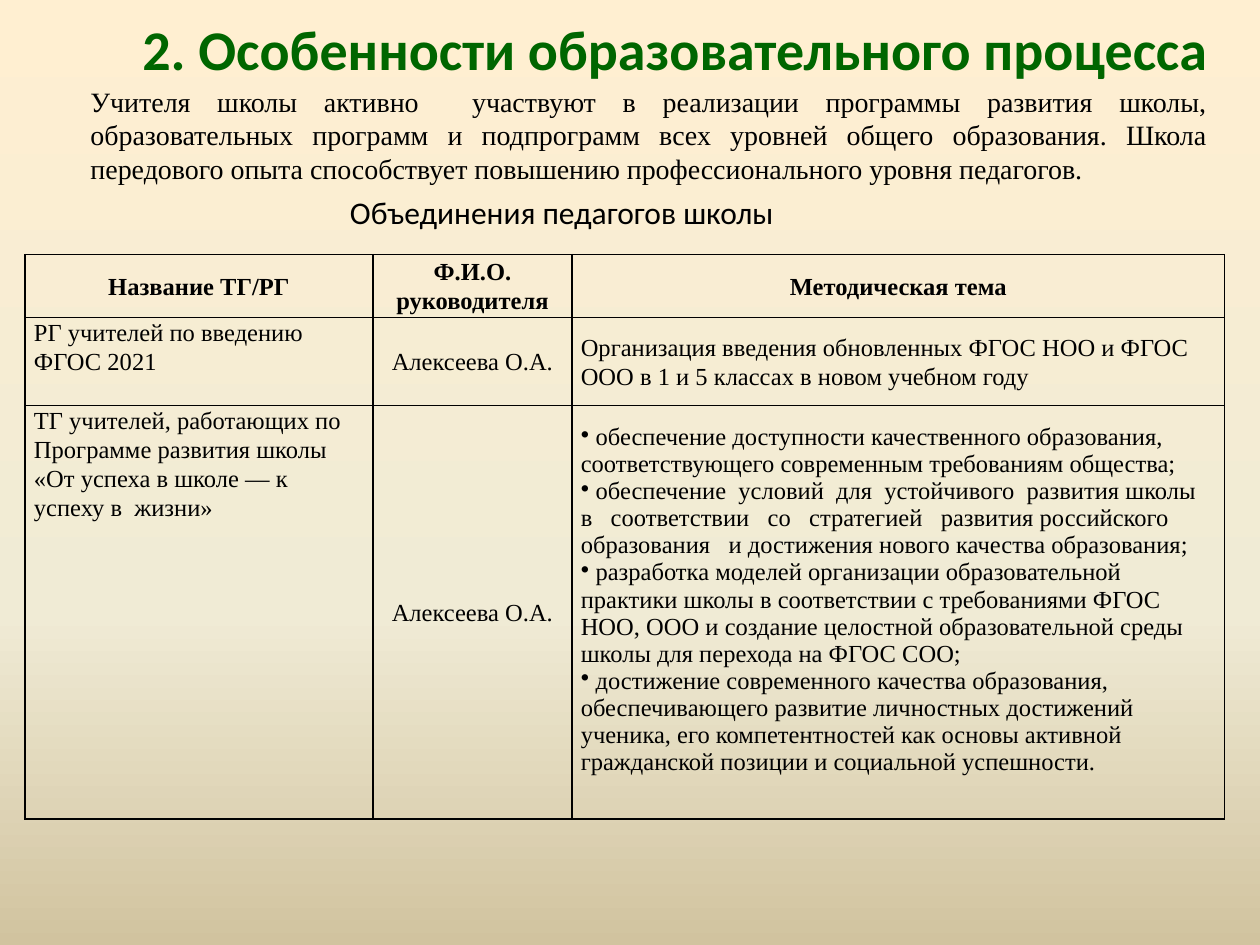
from pptx import Presentation
from pptx.dml.color import RGBColor
from pptx.enum.text import MSO_ANCHOR, PP_ALIGN
from pptx.oxml import parse_xml
from pptx.oxml.ns import nsdecls
from pptx.util import Inches, Pt

COLORS = {"text": "000000", "title": "006600", "border": "000000"}
BACKGROUND = [(0, "FFEFD1"), (65, "F0EBD5"), (100, "D1C39F")]
SERIF, SANS = "Times New Roman", "Calibri"
LEFT, CENTER, JUSTIFY = PP_ALIGN.LEFT, PP_ALIGN.CENTER, PP_ALIGN.JUSTIFY
TOP, MIDDLE = MSO_ANCHOR.TOP, MSO_ANCHOR.MIDDLE

COL_WIDTHS = [2.76, 1.58, 5.18]
ROW_HEIGHTS = [0.5, 0.7, 3.28]
BULLET = "•"
GOALS = [
    "• обеспечение доступности качественного образования,",
    "соответствующего современным требованиям общества;",
    "• обеспечение  условий  для  устойчивого  развития школы   в   соответствии   со   "
    "стратегией   развития российского образования   и достижения нового качества образования;",
    "• разработка моделей организации образовательной практики школы в соответствии с "
    "требованиями ФГОС НОО, ООО и создание целостной образовательной среды школы для "
    "перехода на ФГОС СОО;",
    "• достижение современного качества образования, обеспечивающего развитие личностных "
    "достижений ученика, его компетентностей как основы активной гражданской позиции и "
    "социальной успешности.",
]
ROWS = [
    ["Название ТГ/РГ", "Ф.И.О. руководителя", "Методическая тема"],
    ["РГ учителей по введению ФГОС 2021", "Алексеева О.А.",
     "Организация введения обновленных ФГОС НОО и ФГОС ООО в 1 и 5 классах в новом учебном году"],
    ["ТГ учителей, работающих по Программе развития школы  «От успеха в школе — к успеху в  жизни»",
     "Алексеева О.А.", GOALS],
]


class SlideBuilder:
    def __init__(self, slide):
        self.slide = slide

    def background(self, stops):
        gs = "".join(f'<a:gs pos="{pos * 1000}"><a:srgbClr val="{color}"/></a:gs>'
                     for pos, color in stops)
        self.slide.background.fill.solid()
        bg = self.slide._element.cSld.bg.bgPr
        bg.replace(bg[0], parse_xml(
            f'<a:gradFill {nsdecls("a")} rotWithShape="1"><a:gsLst>{gs}</a:gsLst>'
            '<a:lin ang="5400000" scaled="0"/></a:gradFill>'))

    def paragraph(self, p, text, align, font, size, color="text", bold=False, spacing=None):
        p.alignment = align
        if spacing:
            p.line_spacing = spacing
        if text.startswith(BULLET):
            text = text[len(BULLET):]
            pPr = p._p.get_or_add_pPr()
            pPr.set("marL", "0")
            pPr.set("indent", "0")
            pPr.append(parse_xml(f'<a:buChar {nsdecls("a")} char="{BULLET}"/>'))
        r = p.add_run()
        r.text = text
        for name, value in {"name": font, "size": Pt(size), "bold": bold}.items():
            setattr(r.font, name, value)
        r.font.color.rgb = RGBColor.from_string(COLORS[color])

    def text(self, box, text, align, font, size, anchor=TOP, wrap=True, **style):
        tf = self.slide.shapes.add_textbox(*map(Inches, box)).text_frame
        tf.word_wrap = wrap
        tf.vertical_anchor = anchor
        self.paragraph(tf.paragraphs[0], text, align, font, size, **style)

    def cell(self, cell, content, align, anchor, bold):
        is_list = isinstance(content, list)
        layout = {"margin_left": Inches(0.07), "margin_right": Inches(0.07),
                  "margin_top": 0, "margin_bottom": Inches(0.2 if is_list else 0),
                  "vertical_anchor": anchor}
        for name, value in layout.items():
            setattr(cell, name, value)
        tf = cell.text_frame
        for i, text in enumerate(content if is_list else [content]):
            p = tf.add_paragraph() if i else tf.paragraphs[0]
            self.paragraph(p, text, align, SERIF, 14, bold=bold,
                           spacing=None if is_list else 1.07)
        cell.fill.background()
        tcPr = cell._tc.get_or_add_tcPr()
        for i, side in enumerate("LRTB"):
            tcPr.insert(i, parse_xml(
                f'<a:ln{side} {nsdecls("a")} w="{Pt(1)}"><a:solidFill>'
                f'<a:srgbClr val="{COLORS["border"]}"/></a:solidFill></a:ln{side}>'))

    def table(self, left, top, widths, heights, rows):
        table = self.slide.shapes.add_table(
            len(heights), len(widths), Inches(left), Inches(top),
            Inches(sum(widths)), Inches(sum(heights))).table
        for col, width in zip(table.columns, widths):
            col.width = Inches(width)
        for row, height in zip(table.rows, heights):
            row.height = Inches(height)
        for i, row in enumerate(rows):
            for j, content in enumerate(row):
                header = i == 0
                self.cell(table.cell(i, j), content,
                          CENTER if header or j == 1 else LEFT,
                          MIDDLE if header or j > 0 else TOP, header)


def main():
    prs = Presentation()
    prs.slide_width, prs.slide_height = Inches(10), Inches(7.5)
    s = SlideBuilder(prs.slides.add_slide(prs.slide_layouts[6]))
    s.background(BACKGROUND)

    # Table with its caption
    s.text((2.66, 1.48, 3.6, 0.4), "Объединения педагогов школы", CENTER, SANS, 18, wrap=False)
    s.table(0.2, 2.02, COL_WIDTHS, ROW_HEIGHTS, ROWS)

    # Title and introduction
    s.text((0.86, 0, 9, 0.77), "2. Особенности образовательного процесса",
           CENTER, SANS, 32, anchor=MIDDLE, color="title", bold=True)
    s.text((0.62, 0.62, 9.06, 0.91),
           "Учителя школы активно  участвуют в реализации программы развития школы, "
           "образовательных программ и подпрограмм всех уровней общего образования. Школа "
           "передового опыта способствует повышению профессионального уровня педагогов.",
           JUSTIFY, SERIF, 16)
    prs.save("out.pptx")


if __name__ == "__main__":
    main()
